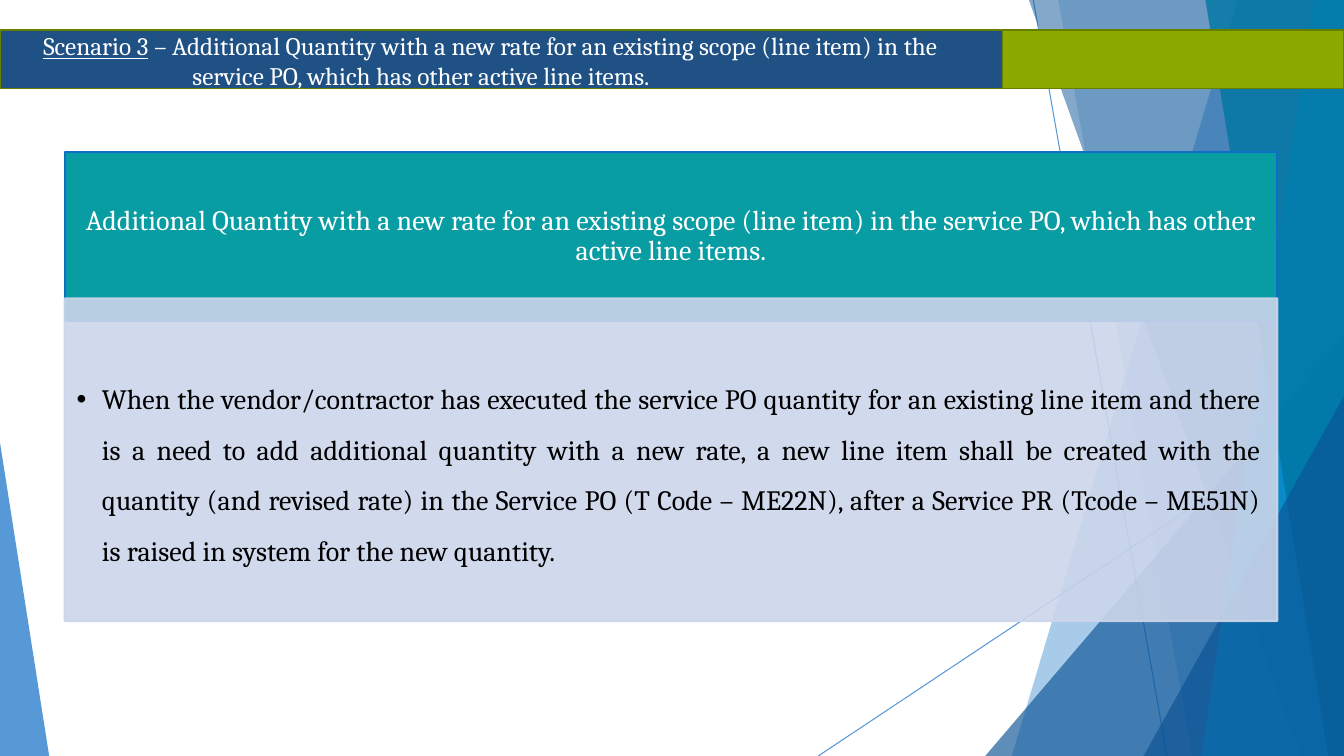
from pptx import Presentation
from pptx import util as u
from pptx.dml import color
from pptx.enum import shapes, text
from pptx.oxml import ns
from lxml import etree

COLOURS = {
    "blue": "0F6FC6", "navy": "0B5394", "sky": "009DD9", "ocean": "0076A3",
    "banner": "205185", "green": "8BAA00", "olive": "677E00",
    "teal": "089CA3", "lavender": "CCD5EA", "white": "FFFFFF", "black": "000000",
}
FONT = "Cambria"
WIDTH, HEIGHT = 33.87, 19.05
SCOPE = ("Additional Quantity with a new rate for an existing scope (line item) "
         "in the service PO, which has other active line items.")
GUIDANCE = ("When the vendor/contractor has executed the service PO quantity for an "
            "existing line item and there is a need to add additional quantity with a "
            "new rate, a new line item shall be created with the quantity (and revised "
            "rate) in the Service PO (T Code – ME22N), after a Service PR (Tcode – "
            "ME51N) is raised in system for the new quantity.")


def colour_fill(fill, name, opacity=100):
    fill.solid()
    fill.fore_color.rgb = color.RGBColor.from_string(COLOURS[name])
    if opacity < 100:
        tint = fill._xPr.find(".//" + ns.qn("a:srgbClr"))
        etree.SubElement(tint, ns.qn("a:alpha")).set("val", str(opacity * 1000))


def paint(shape, fill, opacity=100, line=None, weight=1.0):
    colour_fill(shape.fill, fill, opacity)
    if line:
        colour_fill(shape.line.fill, line, opacity)
        shape.line.width = u.Pt(weight)
    else:
        shape.line.fill.background()


def place(shape, box):
    shape.left, shape.top, shape.width, shape.height = (u.Cm(n) for n in box)


def add_block(page, kind, box, fill, **style):
    block = page.shapes.add_shape(kind, *(u.Cm(n) for n in box))
    block.shadow.inherit = False
    paint(block, fill, **style)
    return block


def set_frame(shape, anchor, margins):
    frame = shape.text_frame
    frame.word_wrap = True
    frame.auto_size = text.MSO_AUTO_SIZE.NONE
    frame.vertical_anchor = anchor
    frame.margin_left, frame.margin_top, frame.margin_right, frame.margin_bottom = (
        u.Cm(n) for n in margins)
    return frame.paragraphs[0]


def add_span(para, words, size, colour, underline=False):
    span = para.add_run()
    span.text = words
    span.font.name = FONT
    span.font.size = u.Pt(size)
    span.font.underline = underline
    span.font.color.rgb = color.RGBColor.from_string(COLOURS[colour])


def set_paragraph(para, align, spacing, after=0, hang=0):
    para.alignment = align
    para.line_spacing = spacing
    para.space_before = u.Pt(0)
    para.space_after = u.Pt(after)
    properties = para._p.get_or_add_pPr()
    properties.set("marL", str(u.Cm(hang)))
    properties.set("indent", str(-u.Cm(hang)))


def add_ray(page, start, end):
    ray = page.shapes.add_connector(
        shapes.MSO_CONNECTOR.STRAIGHT, *(u.Cm(n) for n in start + end))
    colour_fill(ray.line.fill, "blue", 70)
    ray.line.width = u.Pt(0.75)
    etree.SubElement(ray._element.spPr, ns.qn("a:effectLst"))


def add_stripe(page, box, top_x, bottom_x, fill, opacity):
    left, top, width, height = box
    right, bottom = left + width, top + height
    builder = page.shapes.build_freeform(u.Cm(left + top_x), u.Cm(top))
    builder.add_line_segments([(u.Cm(x), u.Cm(y)) for x, y in (
        (right, top), (right, bottom), (left + bottom_x, bottom))])
    stripe = builder.convert_to_shape()
    stripe.shadow.inherit = False
    paint(stripe, fill, opacity)


def add_corner(page, box, width, height, fill, opacity, apex):
    left, top, full_width, full_height = box
    corner = add_block(
        page, shapes.MSO_SHAPE.ISOSCELES_TRIANGLE,
        (left + apex * (full_width - width), top + full_height - height, width, height),
        fill, opacity=opacity)
    corner.adjustments[0] = apex


def draw_backdrop(page, box):
    left, top, width, height = box
    add_ray(page, (left + 26.04, top), (left + 29.41, top + height))
    add_ray(page, (left + width, top + 10.24), (left + 20.62, top + height))
    add_stripe(page, box, 31.19, 25.5, "blue", 36)
    add_stripe(page, box, 26.67, 30.05, "blue", 20)
    add_corner(page, box, 9.04, 10.59, "navy", 66, 1)
    add_stripe(page, box, 25.93, 32.79, "navy", 50)
    add_stripe(page, box, 33.1, 30.28, "sky", 70)
    add_stripe(page, box, 30.38, 33.48, "ocean", 80)
    add_corner(page, box, 5.05, 9.07, "navy", 66, 1)
    add_corner(page, box, 1.24, 7.9, "blue", 70, 0)


def draw_banner(page, box):
    left, top, width, height = box
    split = 25.27
    for x, part, fill in ((left, split, "banner"),
                          (left + split, width - split, "green")):
        add_block(page, shapes.MSO_SHAPE.RECTANGLE, (x, top, part, height),
                  fill, line="olive")
    title = page.shapes.title
    page.shapes._spTree.append(title._element)
    place(title, (left + 0.84, top - 0.12, 24.49, 1.8))
    para = set_frame(title, text.MSO_ANCHOR.TOP, (0.25, 0.13, 0.25, 0.13))
    set_paragraph(para, text.PP_ALIGN.LEFT, 1.0, hang=3.76)
    add_span(para, "Scenario 3", 18, "white", underline=True)
    add_span(para, " – " + SCOPE, 18, "white")


def draw_panel(page, box):
    left, top, width, height = box
    body_top = 3.68
    heading = add_block(page, shapes.MSO_SHAPE.RECTANGLE, (left, top, width, 4.24),
                        "teal", line="blue", weight=1.5)
    para = set_frame(heading, text.MSO_ANCHOR.MIDDLE, (0.41, 0.23, 0.41, 0.23))
    set_paragraph(para, text.PP_ALIGN.CENTER, 0.9, after=7)
    add_span(para, SCOPE, 20, "white")

    body = page.placeholders[1]
    page.shapes._spTree.append(body._element)
    place(body, (left, top + body_top, width, height - body_top))
    paint(body, "lavender", 90, line="lavender", weight=1.5)
    para = set_frame(body, text.MSO_ANCHOR.TOP, (0.3, 1.68, 0.41, 0.43))
    set_paragraph(para, text.PP_ALIGN.JUSTIFY, 1.5, after=3, hang=0.64)
    add_span(para, GUIDANCE, 20, "black")


def main():
    deck = Presentation()
    deck.slide_width, deck.slide_height = u.Cm(WIDTH), u.Cm(HEIGHT)
    page = deck.slides.add_slide(deck.slide_layouts[1])
    colour_fill(page.background.fill, "white")
    draw_backdrop(page, (0, 0, WIDTH, HEIGHT))
    draw_banner(page, (0, 0.76, WIDTH, 1.47))
    draw_panel(page, (1.63, 3.84, 30.56, 11.81))
    deck.save("out.pptx")


if __name__ == "__main__":
    main()
